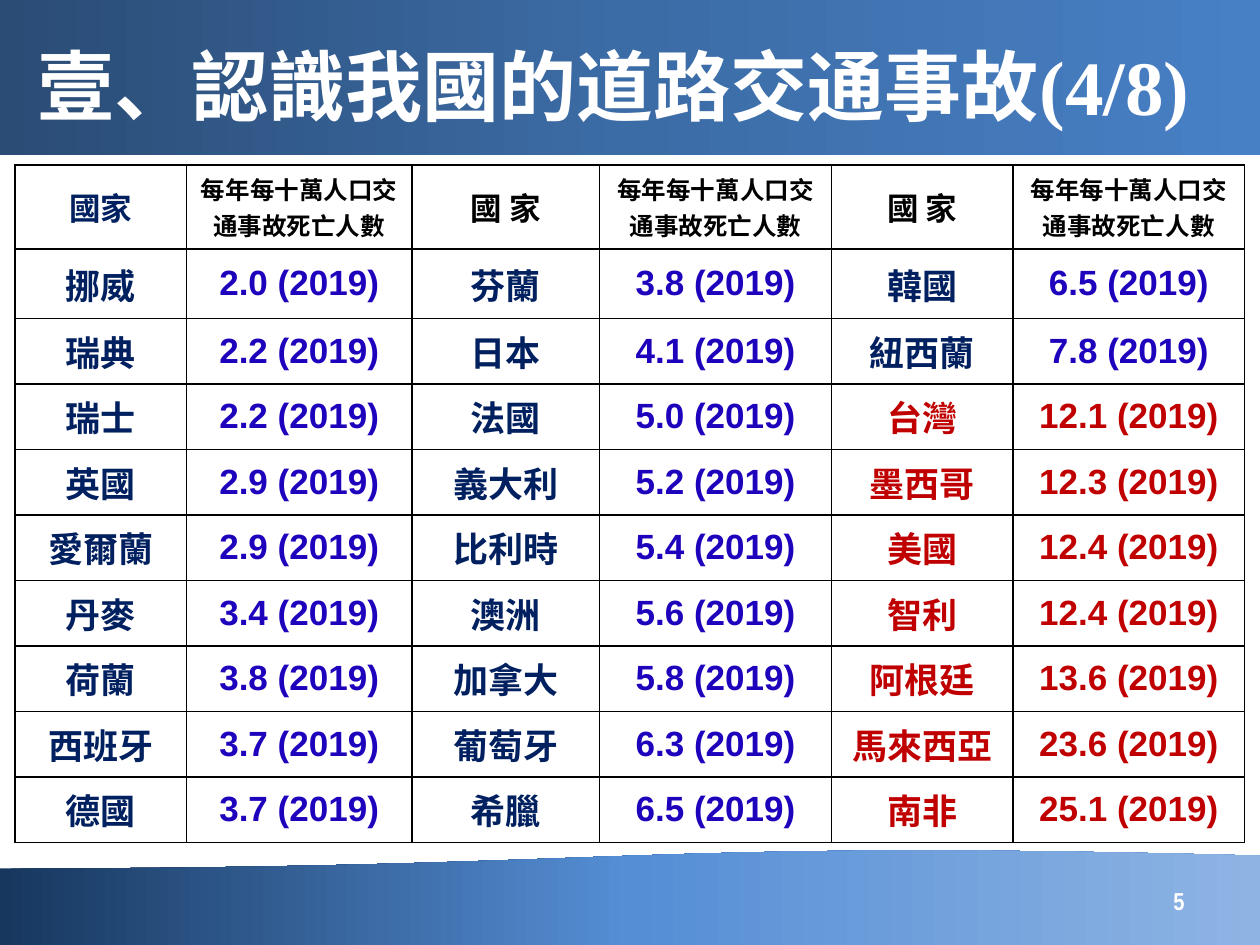
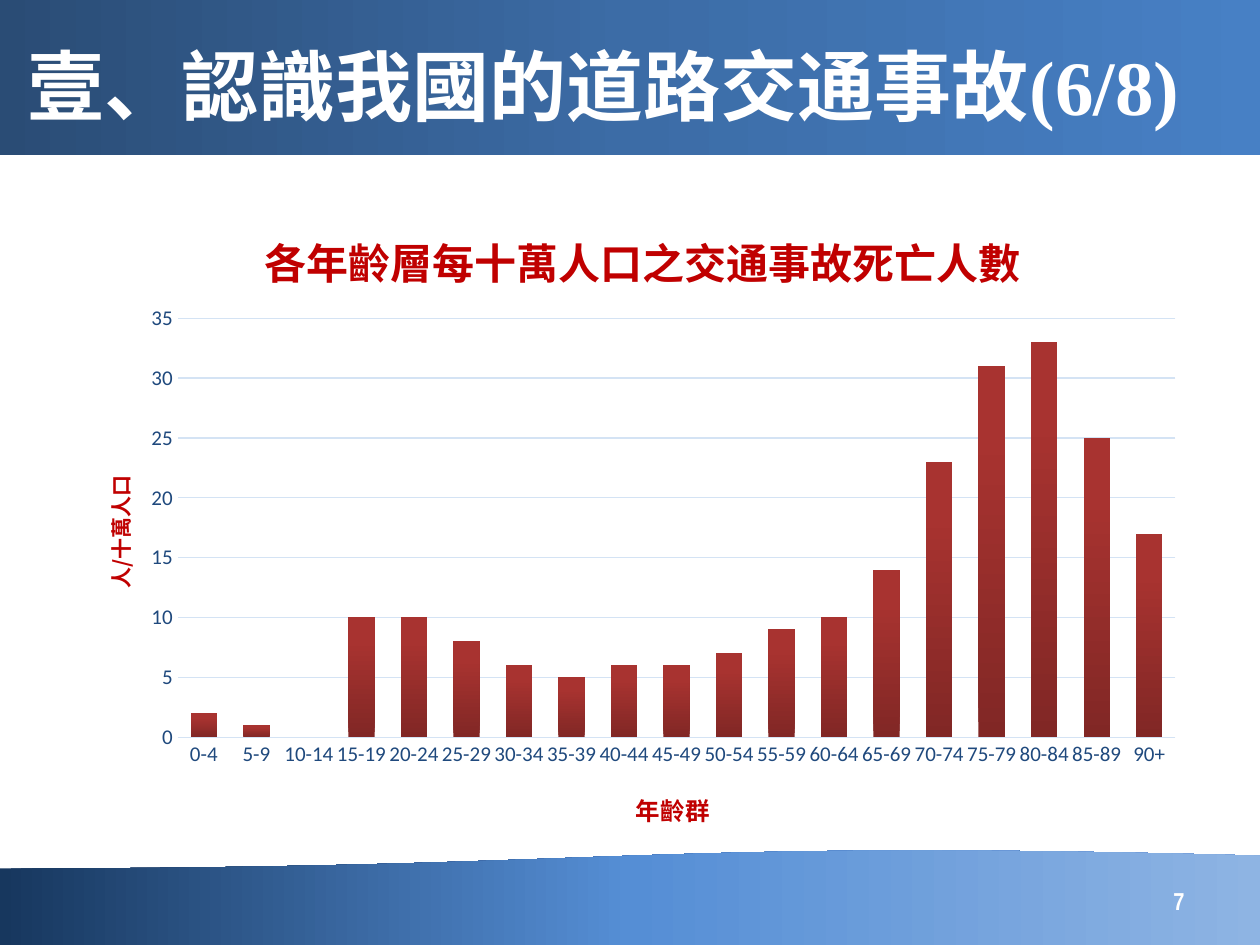
from copy import deepcopy

from lxml import etree
from pptx import Presentation
from pptx import util as u
from pptx.chart.data import CategoryChartData
from pptx.dml.color import RGBColor
from pptx.enum import chart as charts, shapes, text as texts
from pptx.oxml.ns import qn

CJK, ARIAL, TIMES = "Noto Sans CJK SC", "Arial", "Times New Roman"
NARROW, CALIBRI = "Arial Narrow", "Calibri"
WHITE, BLACK, NAVY, BLUE, RED = "FFFFFF", "000000", "002060", "1E03BD", "C00000"
AXIS, GRID = "1F497D", "D4E3F4"
HEAD_FADE = [(0, "2A4C75"), (50, "3C6CA6"), (100, "4780C5")]
FOOT_FADE = [(0, "17375E"), (50, "558ED5"), (100, "8EB4E3")]
BAR_FADE = [(0, "812725"), (80, "A83330"), (100, "AB312E")]

TITLE = "壹、認識我國的道路交通事故"
RATE_HEAD = "每年每十萬人口交通事故死亡人數"
YEAR = "(2019)"
COLS = [1.36, 1.79, 1.49, 1.84, 1.44, 1.84]
ROWS = [0.55, 0.55] + [0.52] * 8
HIGH_RATE = 10
RATES = [
    [("挪威", 2.0), ("瑞典", 2.2), ("瑞士", 2.2), ("英國", 2.9), ("愛爾蘭", 2.9),
     ("丹麥", 3.4), ("荷蘭", 3.8), ("西班牙", 3.7), ("德國", 3.7)],
    [("芬蘭", 3.8), ("日本", 4.1), ("法國", 5.0), ("義大利", 5.2), ("比利時", 5.4),
     ("澳洲", 5.6), ("加拿大", 5.8), ("葡萄牙", 6.3), ("希臘", 6.5)],
    [("韓國", 6.5), ("紐西蘭", 7.8), ("台灣", 12.1), ("墨西哥", 12.3), ("美國", 12.4),
     ("智利", 12.4), ("阿根廷", 13.6), ("馬來西亞", 23.6), ("南非", 25.1)],
]
AGES = [f"{a}-{a + 4}" for a in range(0, 90, 5)] + ["90+"]
DEATHS = [2, 1, 0, 10, 10, 8, 6, 5, 6, 6, 7, 9, 10, 14, 23, 31, 33, 25, 17]


def rgb(code):
    return RGBColor.from_string(code)


def box(*sides):
    return [u.Inches(side) for side in sides]


def style(font, size, color, name, bold=False):
    font.size, font.name, font.bold = u.Pt(size), name, bold
    font.color.rgb = rgb(color)


def write(par, words, size=20, color=BLACK, font=CJK, bold=True, align=None):
    """Add a run to a paragraph, with the same face for East Asian text."""
    run = par.add_run()
    run.text = words
    style(run.font, size, color, font, bold)
    props = run._r.get_or_add_rPr()
    etree.SubElement(props, qn("a:ea"), typeface=CJK if font == TIMES else font)
    if align:
        par.alignment = align


def fade(fill, root, stops, angle):
    """Fill with a gradient whose angle runs clockwise."""
    fill.gradient()
    fill.gradient_angle = (360 - angle) % 360
    marks = root.find(".//" + qn("a:gsLst"))
    while len(marks) < len(stops):
        marks.append(deepcopy(marks[0]))
    for mark, (place, color) in zip(fill.gradient_stops, stops):
        mark.position = place / 100
        mark.color.rgb = rgb(color)


def add_band(slide, kind, sides, stops, turn=0):
    """Draw a band and hand it to the layout, so that all slides show it."""
    band = slide.shapes.add_shape(kind, *box(*sides))
    band.shadow.inherit = False
    band.line.fill.background()
    band.rotation = turn
    fade(band.fill, band._element, stops, turn)
    slide.slide_layout.shapes.element.insert(2, band._element)


def add_title(slide, part, left, width):
    title = slide.shapes.title
    title.left, title.top, title.width, title.height = box(left, 0.21, width, 0.93)
    frame = title.text_frame
    frame.auto_size = texts.MSO_AUTO_SIZE.NONE
    frame.vertical_anchor = texts.MSO_ANCHOR.MIDDLE
    par = frame.paragraphs[0]
    write(par, TITLE, 44, WHITE, align=texts.PP_ALIGN.LEFT)
    write(par, part, 44, WHITE, TIMES)


def add_page(slide, number):
    frame = slide.shapes.add_textbox(*box(7.17, 6.95, 2.33, 0.4)).text_frame
    frame.word_wrap = True
    frame.vertical_anchor = texts.MSO_ANCHOR.MIDDLE
    write(frame.paragraphs[0], number, 14, WHITE, NARROW, align=texts.PP_ALIGN.RIGHT)


def set_cell(cell, words, **form):
    cell.fill.background()
    cell.vertical_anchor = texts.MSO_ANCHOR.MIDDLE
    write(cell.text_frame.paragraphs[0], words, align=texts.PP_ALIGN.CENTER, **form)
    props = cell._tc.get_or_add_tcPr()
    for spot, side in enumerate(("lnL", "lnR", "lnT", "lnB")):
        line = etree.Element(qn("a:" + side), w=str(u.Pt(1)))
        paint = etree.SubElement(line, qn("a:solidFill"))
        etree.SubElement(paint, qn("a:srgbClr"), val=BLACK)
        props.insert(spot, line)


def add_rates(slide):
    sides = box(0.12, 1.31, sum(COLS), sum(ROWS))
    table = slide.shapes.add_table(len(ROWS), len(COLS), *sides).table
    table.first_row = table.horz_banding = False
    for col, width in zip(table.columns, COLS):
        col.width = u.Inches(width)
    for row, height in zip(table.rows, ROWS):
        row.height = u.Inches(height)
    for group, lands in enumerate(RATES):
        left, right = 2 * group, 2 * group + 1
        set_cell(table.cell(0, left), "國 家" if group else "國家", size=18,
                 color=BLACK if group else NAVY)
        set_cell(table.cell(0, right), RATE_HEAD, size=14)
        for row, (land, rate) in enumerate(lands, 1):
            high = rate > HIGH_RATE
            set_cell(table.cell(row, left), land, color=RED if high else NAVY)
            set_cell(table.cell(row, right), f"{rate} {YEAR}", font=ARIAL,
                     color=RED if high else BLUE)


def place(part, spot, **sizes):
    """Pin a chart part at fractions of the chart's size."""
    for old in part.findall(qn("c:layout")):
        part.remove(old)
    layout = etree.Element(qn("c:layout"))
    manual = etree.SubElement(layout, qn("c:manualLayout"))
    if "w" in sizes:
        etree.SubElement(manual, qn("c:layoutTarget"), val="inner")
    for side in ("x", "y"):
        etree.SubElement(manual, qn(f"c:{side}Mode"), val="edge")
    for side, size in sizes.items():
        etree.SubElement(manual, qn("c:" + side), val=str(size))
    part.insert(spot, layout)


def label(title, words, size, x, y):
    write(title.text_frame.paragraphs[0], words, size, RED)
    place(title._element, 1, x=x, y=y)


def add_ages(slide):
    data = CategoryChartData()
    data.categories = AGES
    data.add_series("Series 1", DEATHS)
    chart = slide.shapes.add_chart(charts.XL_CHART_TYPE.COLUMN_CLUSTERED,
                                   *box(0.51, 1.47, 9, 5.28), data).chart
    style(chart.font, 10, BLACK, CALIBRI)
    chart.has_legend = False
    chart.has_title = True
    label(chart.chart_title, "各年齡層每十萬人口之交通事故死亡人數", 24, 0.17, 0.05)
    plot = chart.plots[0]
    plot.vary_by_categories = False
    plot.gap_width, plot.overlap = 100, -24
    bars = plot.series[0]
    fade(bars.format.fill, bars._element, BAR_FADE, 270)

    ages, rates = chart.category_axis, chart.value_axis
    for axis in (ages, rates):
        axis.major_tick_mark = axis.minor_tick_mark = charts.XL_TICK_MARK.NONE
        style(axis.tick_labels.font, 12, AXIS, CALIBRI)
    label(ages.axis_title, "年齡群", 14, 0.5, 0.9)
    label(rates.axis_title, "人/十萬人口", 12, 0.03, 0.43)
    turn = rates.axis_title._element.find(".//" + qn("a:bodyPr"))
    turn.set("rot", "-5400000")
    turn.set("vert", "horz")
    rates.minimum_scale, rates.maximum_scale, rates.major_unit = 0, 35, 5
    rates.format.line.fill.background()
    for line in (ages.format.line, rates.major_gridlines.format.line):
        line.color.rgb = rgb(GRID)
        line.width = u.Pt(0.75)
    place(chart._chartSpace.find(".//" + qn("c:plotArea")), 0,
          x=0.1, y=0.2, w=0.88, h=0.63)


def main():
    deck = Presentation()
    deck.slide_width, deck.slide_height = box(10, 7.5)
    layout = deck.slide_layouts[5]

    lands = deck.slides.add_slide(layout)
    add_band(lands, shapes.MSO_SHAPE.RECTANGLE, (0, 0, 10, 1.23), HEAD_FADE)
    add_band(lands, shapes.MSO_SHAPE.FLOWCHART_DOCUMENT, (0, 6.74, 10, 0.77),
             FOOT_FADE, turn=180)
    add_rates(lands)
    add_title(lands, "(4/8)", 0.2, 9.69)
    add_page(lands, "5")

    ages = deck.slides.add_slide(layout)
    add_ages(ages)
    add_title(ages, "(6/8)", 0.12, 9.76)
    add_page(ages, "7")
    deck.save("out.pptx")


if __name__ == "__main__":
    main()
